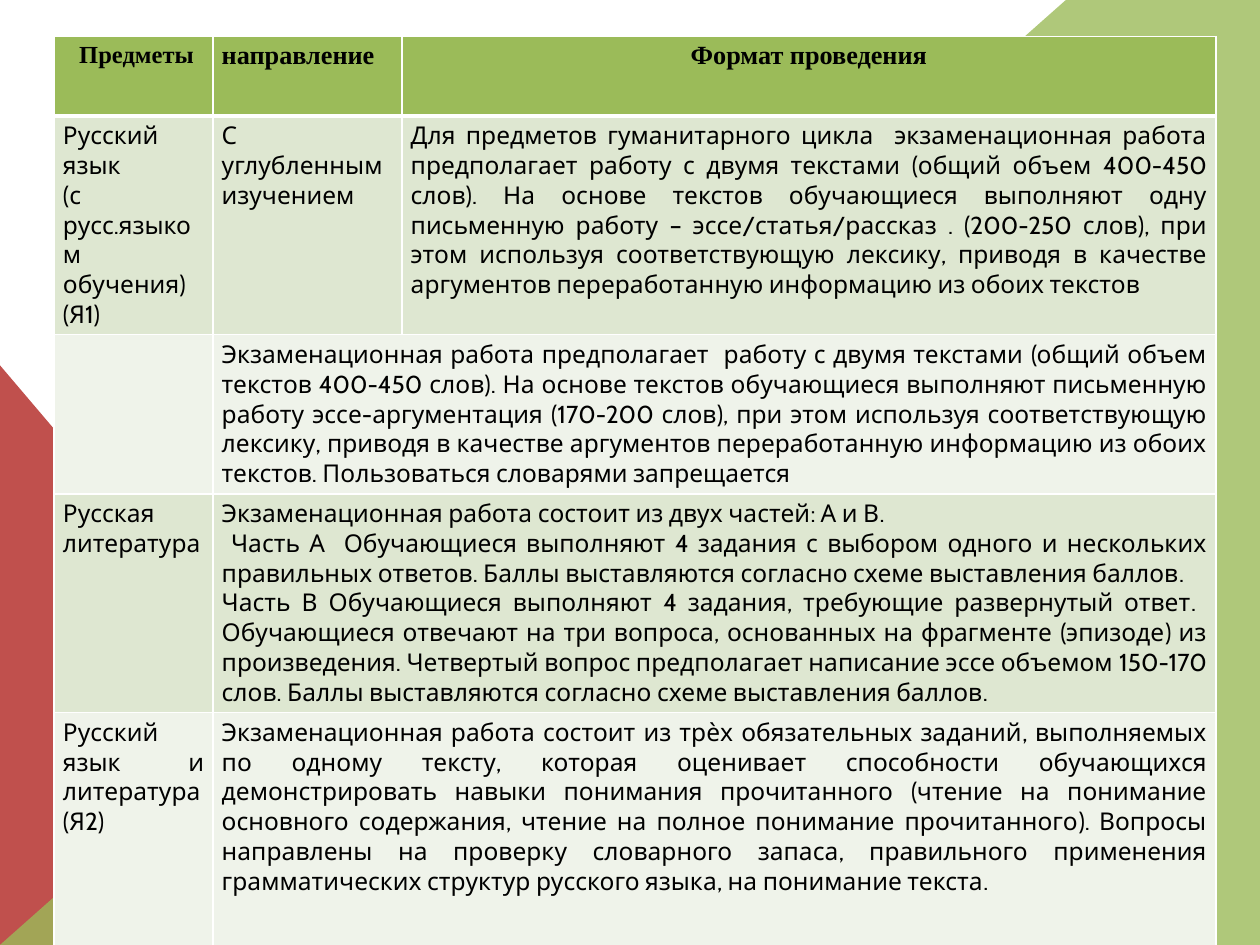
from lxml.etree import SubElement
from pptx import Presentation
from pptx.dml.color import RGBColor
from pptx.enum.shapes import MSO_SHAPE as Shape
from pptx.enum.text import PP_ALIGN as Align
from pptx.oxml import parse_xml
from pptx.oxml.ns import nsdecls, qn
from pptx.util import Inches, Pt

GREEN, RED, WHITE, BLACK = "9BBB59", "C0504D", "FFFFFF", "000000"
BANDS = ["DEE7D1", "EFF3EA"]
SERIF, SANS = "Times New Roman", "Cabin"

COLS = [1.26, 1.5, 6.46]
ROWS = [0.63, 1.37, 1.23, 1.65, 1.89]
HEADS = [
    ("Предметы", 14, Align.CENTER),
    ("направление", 15, Align.LEFT),
    ("Формат проведения", 15, Align.CENTER),
]
# A row with two cells has its second one merged across the last two columns.
BODY = [
    [
        ["Русский язык ", "(с русс.языком обучения) (Я1)"],
        ["С углубленным изучением "],
        ["Для предметов гуманитарного цикла  экзаменационная работа "
         "предполагает работу с двумя текстами (общий объем 400-450 слов). "
         "На основе текстов обучающиеся выполняют одну письменную работу – "
         "эссе/статья/рассказ . (200-250 слов), при этом используя "
         "соответствующую лексику, приводя в качестве аргументов "
         "переработанную информацию из обоих текстов"],
    ],
    [
        [],
        ["Экзаменационная работа предполагает  работу с двумя текстами "
         "(общий объем текстов 400-450 слов). На основе текстов обучающиеся "
         "выполняют письменную работу эссе-аргументация (170-200 слов), при "
         "этом используя соответствующую лексику, приводя в качестве "
         "аргументов переработанную информацию из обоих текстов. "
         "Пользоваться словарями запрещается"],
    ],
    [
        ["Русская литература"],
        ["Экзаменационная работа состоит из двух частей: А и В.  ",
         " Часть А  Обучающиеся выполняют 4 задания с выбором одного и "
         "нескольких правильных ответов. Баллы выставляются согласно схеме "
         "выставления баллов. ",
         "Часть В Обучающиеся выполняют 4 задания, требующие развернутый "
         "ответ.  Обучающиеся отвечают на три вопроса, основанных на "
         "фрагменте (эпизоде) из произведения. Четвертый вопрос предполагает "
         "написание эссе объемом 150-170 слов. Баллы выставляются согласно "
         "схеме выставления баллов. "],
    ],
    [
        ["Русский язык и литература (Я2)"],
        ["Экзаменационная работа состоит из трѐх обязательных заданий, "
         "выполняемых по одному тексту, которая оценивает способности "
         "обучающихся демонстрировать навыки понимания прочитанного (чтение "
         "на понимание основного содержания, чтение на полное понимание "
         "прочитанного). Вопросы направлены на проверку словарного запаса, "
         "правильного применения грамматических структур русского языка, на "
         "понимание текста. "],
    ],
]


def paint(fill, color):
    fill.solid()
    fill.fore_color.rgb = RGBColor.from_string(color)


def flat(shape, color):
    """Give a shape a plain fill with no line or shadow."""
    paint(shape.fill, color)
    shape.line.fill.background()
    shape.shadow.inherit = False


def write(frame, lines, size=14, font=SANS, bold=False, align=Align.JUSTIFY):
    for i, line in enumerate(lines):
        para = frame.add_paragraph() if i else frame.paragraphs[0]
        para.alignment = align
        run = para.add_run()
        run.text = line
        run.font.size = Pt(size)
        run.font.name = font
        run.font.bold = bold
        run.font.color.rgb = RGBColor.from_string(BLACK)


def edge(cell, base):
    """Draw white borders, with the given width below the cell."""
    props = cell._tc.get_or_add_tcPr()
    for i, (side, width) in enumerate(zip("LRTB", [1, 1, 1, base])):
        props.insert(i, parse_xml(
            f'<a:ln{side} {nsdecls("a")} w="{Pt(width)}"><a:solidFill>'
            f'<a:srgbClr val="{WHITE}"/></a:solidFill></a:ln{side}>'))


def style(cell, color, base=1):
    paint(cell.fill, color)
    edge(cell, base)
    cell.margin_left = cell.margin_right = Inches(0.07)
    cell.margin_top = cell.margin_bottom = Inches(0.04)


def backdrop(slide, x, y, w, h):
    wedge = slide.shapes.add_shape(
        Shape.RIGHT_TRIANGLE, x, y + h - Inches(4.6), Inches(3.91), Inches(4.6))
    flat(wedge, RED)
    pen = slide.shapes.build_freeform(x, y + h)
    pen.add_line_segments(
        [(x + Inches(8.46), y), (x + w, y), (x + w, y + h)], close=True)
    sweep = pen.convert_to_shape()
    flat(sweep, GREEN)
    tint = sweep._element.spPr.find(qn("a:solidFill"))[0]
    SubElement(tint, qn("a:alpha")).set("val", "80000")


def exams(slide, x, y, w, h):
    table = slide.shapes.add_table(len(ROWS), len(COLS), x, y, w, h).table
    for col, width in zip(table.columns, COLS):
        col.width = Inches(width)
    for row, height in zip(table.rows, ROWS):
        row.height = Inches(height)
    for c, (text, size, align) in enumerate(HEADS):
        cell = table.cell(0, c)
        style(cell, GREEN, base=3)
        lead = " " if c == 0 else ""
        write(cell.text_frame, [lead + text], size, SERIF, True, align)
    for r, texts in enumerate(BODY, 1):
        for c in range(len(COLS)):
            style(table.cell(r, c), BANDS[(r - 1) % 2])
        if len(texts) < len(COLS):
            table.cell(r, 1).merge(table.cell(r, 2))
        for c, lines in enumerate(texts):
            write(table.cell(r, c).text_frame, lines)


def main():
    deck = Presentation()
    deck.slide_width, deck.slide_height = Inches(10), Inches(7.5)
    slide = deck.slides.add_slide(deck.slide_layouts[6])
    paint(slide.background.fill, WHITE)
    backdrop(slide, 0, 0, deck.slide_width, deck.slide_height)
    exams(slide, Inches(0.43), Inches(0.29), Inches(sum(COLS)), Inches(sum(ROWS)))
    deck.save("out.pptx")


if __name__ == "__main__":
    main()
